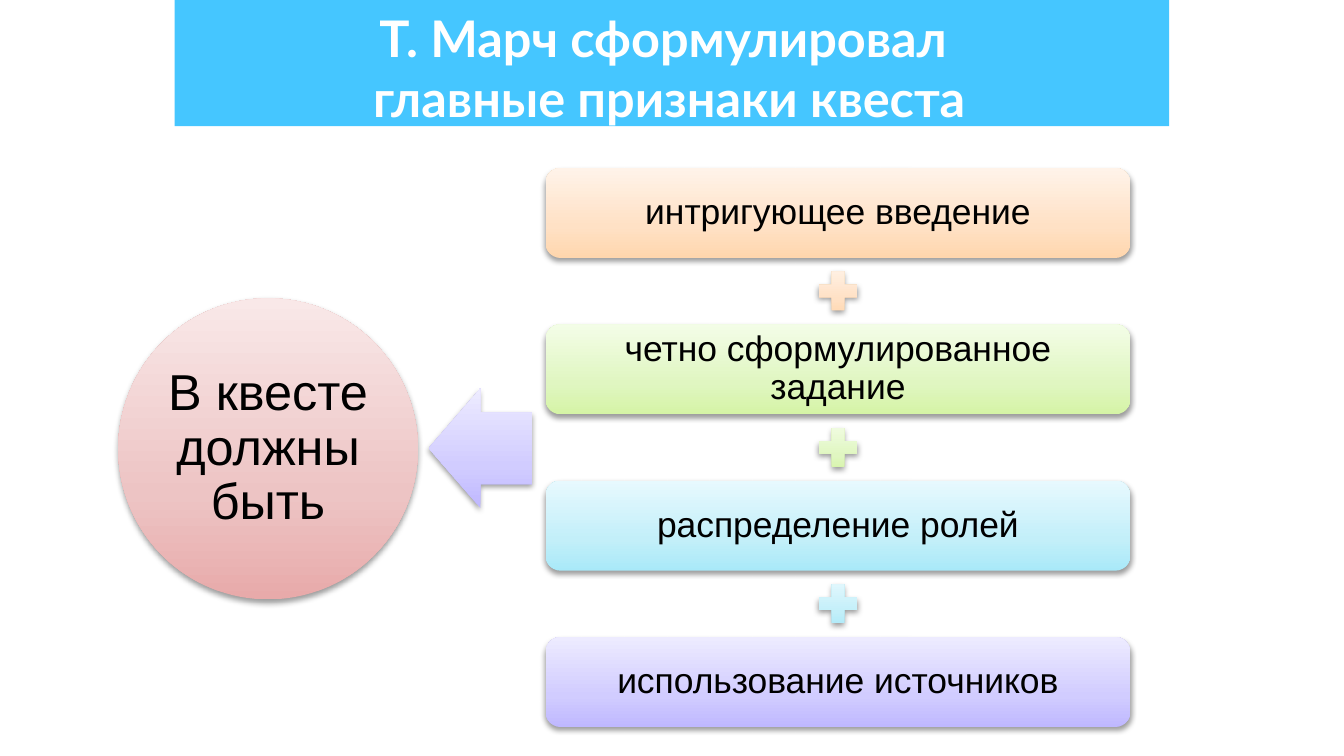
from copy import deepcopy
from lxml.etree import SubElement
from pptx import Presentation
from pptx.dml.color import RGBColor
from pptx.enum.shapes import MSO_SHAPE
from pptx.enum.text import MSO_ANCHOR, PP_ALIGN
from pptx.oxml.ns import qn
from pptx.util import Inches, Pt

PEACH = ("FFD6AD", "FFE1C5", "FFF3E9")
LIME = ("D5F4A6", "E0F6C1", "F3FDE7")
AQUA = ("A9E9F9", "C3EFF9", "E7F9FE")
VIOLET = ("BFB8FF", "D1CCFF", "EDEBFF")
ROSE = ("E8AAAA", "EDC4C4", "F9E8E8")
SIGNS = [
    ("интригующее введение", PEACH),
    ("четно сформулированное задание", LIME),
    ("распределение ролей", AQUA),
    ("использование источников", VIOLET),
]
TOP, LAST = 1.25, 4.74
STEP = (LAST - TOP) / (len(SIGNS) - 1)


def color(code):
    return RGBColor.from_string(code)


def place(box):
    return [Inches(v) for v in box]


def write(shape, text, inset, anchor, para, font):
    frame = shape.text_frame
    frame.word_wrap = True
    frame.vertical_anchor = anchor
    for side in ("left", "top", "right", "bottom"):
        setattr(frame, f"margin_{side}", Inches(inset))
    line = frame.paragraphs[0]
    line.text = text
    line.alignment = PP_ALIGN.CENTER
    for name, value in para.items():
        setattr(line, name, value)
    for run in line.runs:
        for name, value in font.items():
            if name == "color":
                run.font.color.rgb = color(value)
            else:
                setattr(run.font, name, value)


def label(shape, text, size, inset):
    font = {"name": "Arial", "size": Pt(size), "color": "000000"}
    write(shape, text, inset, MSO_ANCHOR.MIDDLE, {"line_spacing": 0.9}, font)


def shade(shape, tones):
    fill = shape.fill
    fill.gradient()
    fill.gradient_angle = 90
    stops = shape._element.spPr.find(qn("a:gradFill")).find(qn("a:gsLst"))
    stops.append(deepcopy(stops[0]))
    for stop, tone, spot in zip(fill.gradient_stops, tones, (0, 0.35, 1)):
        stop.color.rgb = color(tone)
        stop.position = spot


def shadow(shape):
    shape.shadow.inherit = False
    effect = shape._element.spPr.find(qn("a:effectLst"))
    outer = SubElement(effect, qn("a:outerShdw"), blurRad=str(Pt(3.1)),
                       dist=str(Pt(1.6)), dir="5400000", rotWithShape="0")
    tint = SubElement(outer, qn("a:srgbClr"), val="000000")
    SubElement(tint, qn("a:alpha"), val="38000")


def block(slide, kind, box, tones):
    shape = slide.shapes.add_shape(kind, *place(box))
    shape.line.fill.background()
    shade(shape, tones)
    shadow(shape)
    return shape


def band(slide, box, code, alpha):
    shape = slide.shapes.add_shape(MSO_SHAPE.RECTANGLE, *place(box))
    shape.shadow.inherit = False
    shape.line.fill.background()
    shape.fill.solid()
    shape.fill.fore_color.rgb = color(code)
    tint = shape._element.spPr.find(qn("a:solidFill"))[0]
    SubElement(tint, qn("a:alpha"), val=str(alpha * 1000))


def title(slide, text):
    box = slide.shapes.add_textbox(*place((1.28, -0.05, 7.4, 1.02)))
    font = {"name": "Lato", "size": Pt(27), "bold": True, "color": "FFFFFF"}
    write(box, text, 0.1, MSO_ANCHOR.TOP, {}, font)


def signs(slide):
    for row, (text, tones) in enumerate(SIGNS):
        top = TOP + row * STEP
        card = block(slide, MSO_SHAPE.ROUNDED_RECTANGLE,
                     (4.06, top, 4.35, 0.67), tones)
        label(card, text, 19, 0.03)
        if row < len(SIGNS) - 1:
            block(slide, MSO_SHAPE.MATH_PLUS,
                  (6.04, top + 0.72, 0.39, 0.39), tones)


def main():
    deck = Presentation()
    deck.slide_width, deck.slide_height = Inches(10), Inches(5.625)
    slide = deck.slides.add_slide(deck.slide_layouts[6])
    band(slide, (1.3, 0, 7.4, 0.94), "00B2FF", 73)
    title(slide, "Т. Марч сформулировал \nглавные признаки квеста")
    signs(slide)
    arrow = block(slide, MSO_SHAPE.LEFT_ARROW, (3.19, 2.89, 0.77, 0.89), VIOLET)
    arrow.adjustments[0] = 0.6
    arrow.adjustments[1] = 0.5
    disc = block(slide, MSO_SHAPE.OVAL, (0.88, 2.22, 2.23, 2.24), ROSE)
    label(disc, "В квесте должны быть", 27, 0.04)
    deck.save("out.pptx")


if __name__ == "__main__":
    main()
